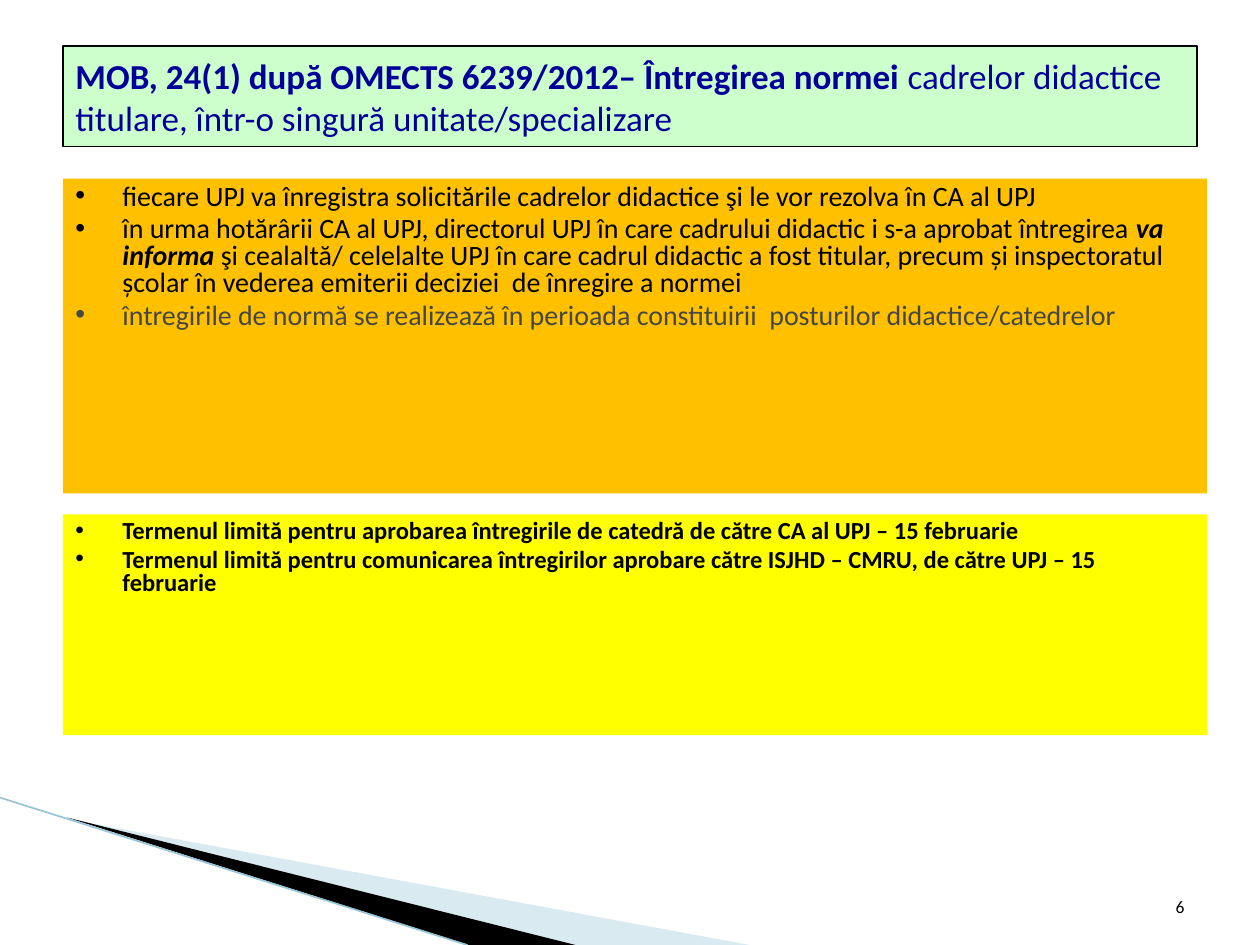
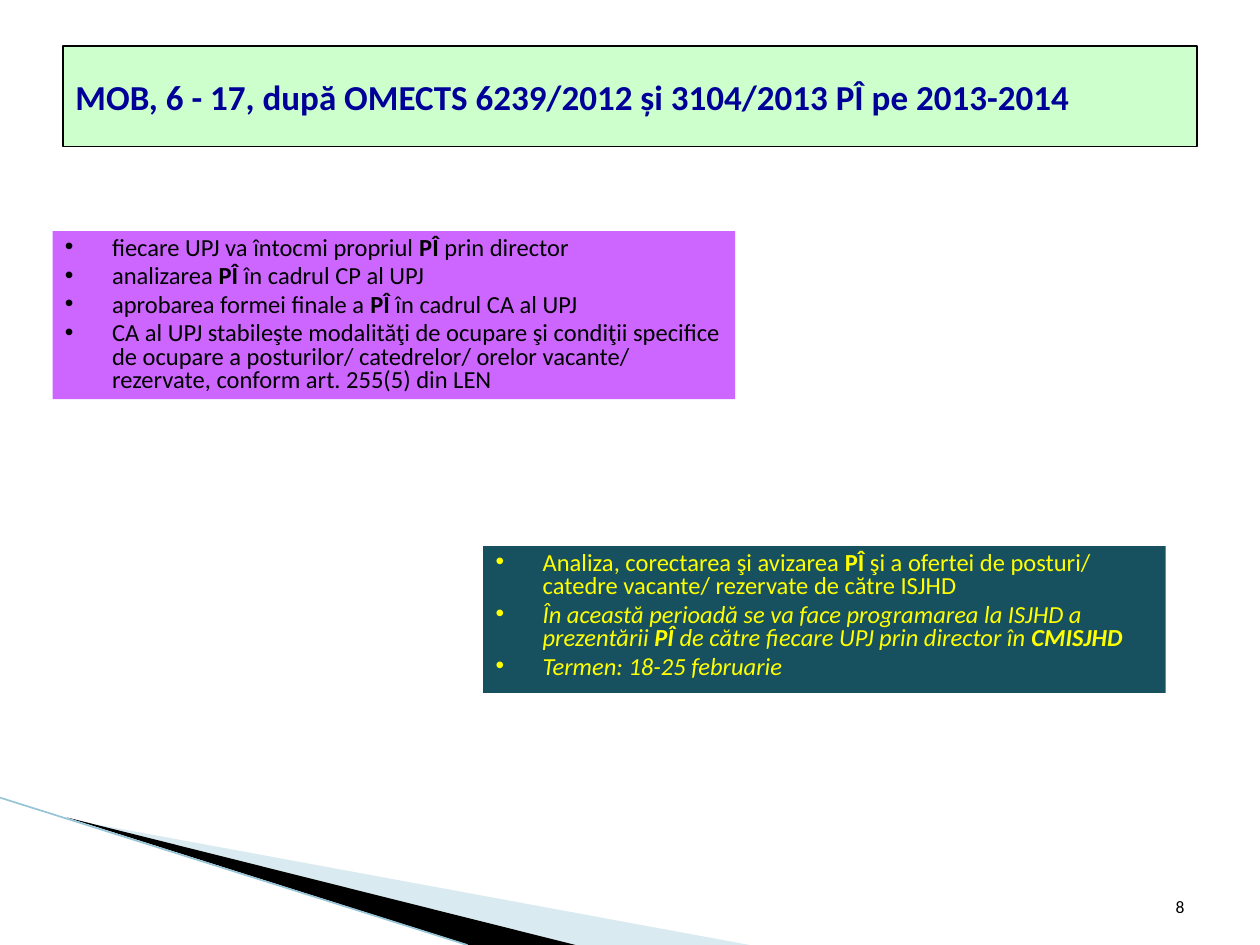
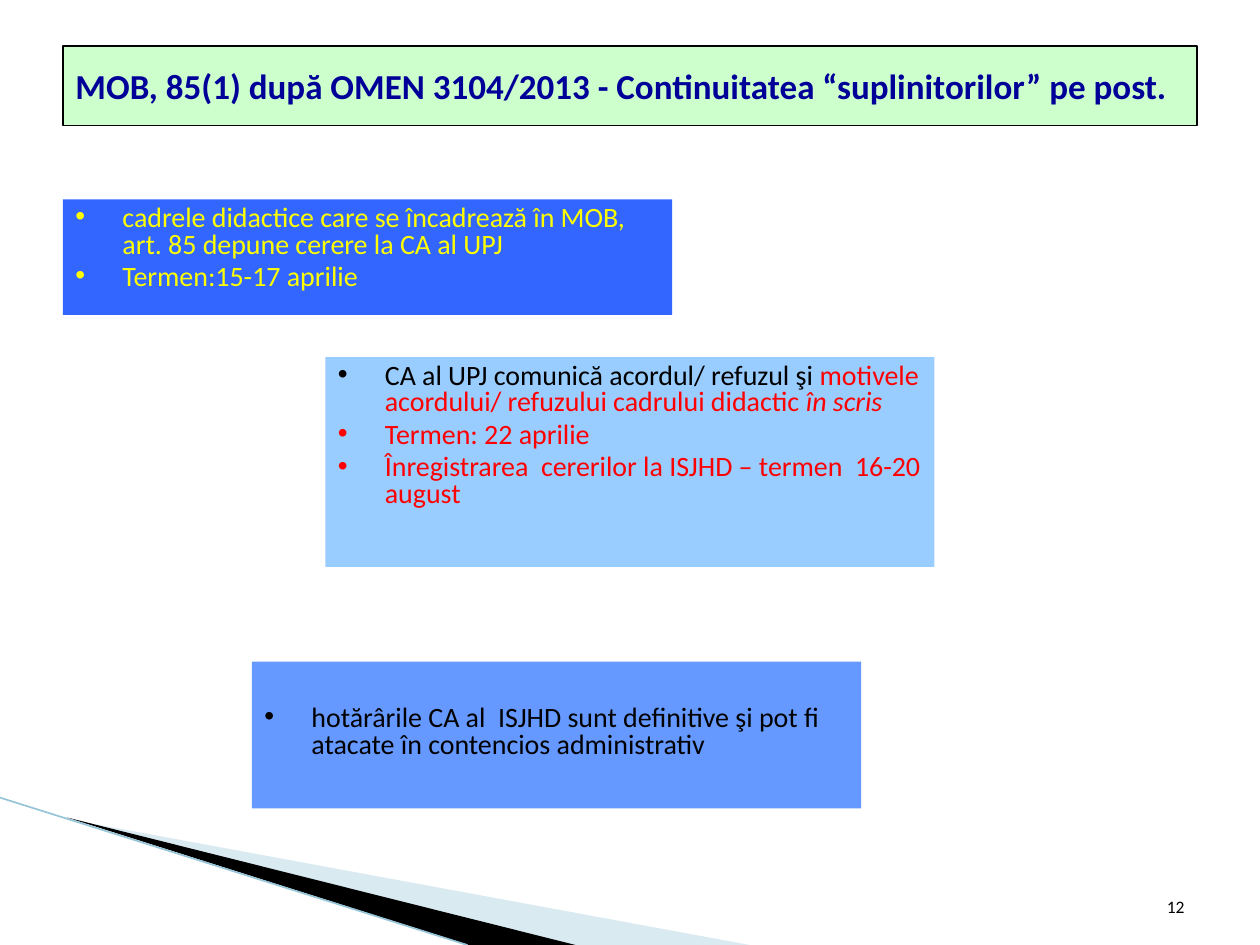
import pptx
import pptx.util
import pptx.dml.color
import pptx.enum.shapes
import pptx.enum.text
import pptx.oxml
import lxml.etree

Cm = pptx.util.Cm
Pt = pptx.util.Pt
Rgb = pptx.dml.color.RGBColor.from_string
Anchor = pptx.enum.text.MSO_ANCHOR
Align = pptx.enum.text.PP_ALIGN
Rect = pptx.enum.shapes.MSO_SHAPE.RECTANGLE

hues = {
    "black": "000000", "navy": "000099", "mint": "CCFFCC", "mist": "A0CBDC",
    "edge": "97C5D8", "amber": "FFC000", "gray": "464646", "yellow": "FFFF00",
    "violet": "CC66FF", "teal": "175160", "blue": "3366FF", "sky": "99CCFF",
    "steel": "6699FF", "red": "FF0000",
}
bold = {"bold": True}
slant = {"italic": True}
both = {"bold": True, "italic": True}
red = {"color": "red"}


def write(frame, paras, size=16, color="black", bold=False, align=None,
          anchor=Anchor.TOP, bullet=False, top=0.13):
    frame.word_wrap = True
    frame.auto_size = pptx.enum.text.MSO_AUTO_SIZE.NONE
    frame.vertical_anchor = anchor
    frame.margin_left = frame.margin_right = Cm(0.25)
    frame.margin_top, frame.margin_bottom = Cm(top), Cm(0.13)
    for rank, runs in enumerate(paras):
        para = frame.add_paragraph() if rank else frame.paragraphs[0]
        para.alignment = align or Align.LEFT
        if bullet:
            para.line_spacing = 0.8
            para.space_before = Pt(size * 0.2 if rank else 0)
            props = para._p.get_or_add_pPr()
            props.set("marL", str(Cm(0.95)))
            props.set("indent", str(-Cm(0.95)))
            for tag, key, value in (("a:buFont", "typeface", "Arial"), ("a:buChar", "char", "•")):
                mark = lxml.etree.SubElement(props, pptx.oxml.ns.qn(tag))
                mark.set(key, value)
        for piece in [runs] if isinstance(runs, str) else runs:
            words, style = (piece, {}) if isinstance(piece, str) else piece
            run = para.add_run()
            run.text = words
            run.font.name = "Calibri"
            run.font.size = Pt(size)
            run.font.bold = style.get("bold", bold)
            run.font.italic = style.get("italic", False)
            run.font.color.rgb = Rgb(hues[style.get("color", color)])


pages = [
    {
        "title": ["MOB, 24(1) după OMECTS 6239/2012– Întregirea normei ",
                  ("cadrelor didactice titulare, într-o singură unitate/specializare", {"bold": False})],
        "tall": 2.03,
        "number": "6",
        "boxes": [
            ((1.27, 3.6, 23.06, 6.35), "amber", {}, [
                "fiecare UPJ va înregistra solicitările cadrelor didactice şi le vor rezolva în CA al UPJ",
                ["în urma hotărârii CA al UPJ, directorul UPJ în care cadrului didactic i s-a aprobat întregirea ",
                 ("va informa ", both),
                 "şi cealaltă/ celelalte UPJ în care cadrul didactic a fost titular, precum și inspectoratul "
                 "școlar în vederea emiterii deciziei  de înregire a normei"],
                [("întregirile de normă se realizează în perioada constituirii  posturilor didactice/catedrelor",
                  {"color": "gray"})],
            ]),
            ((1.27, 10.37, 23.06, 4.45), "yellow", {"size": 14, "bold": True}, [
                "Termenul limită pentru aprobarea întregirile de catedră de către CA al UPJ – 15 februarie",
                "Termenul limită pentru comunicarea întregirilor aprobare către ISJHD – CMRU, "
                "de către UPJ – 15 februarie",
            ]),
        ],
    },
    {
        "title": "MOB, 6 - 17, după OMECTS 6239/2012 și 3104/2013 PÎ pe 2013-2014",
        "tall": 2.03,
        "number": "8",
        "boxes": [
            ((1.06, 4.66, 13.76, 3.39), "violet", {"size": 14}, [
                ["fiecare UPJ va întocmi propriul ", ("PÎ", bold), " prin director"],
                ["analizarea ", ("PÎ", bold), " în cadrul CP al UPJ"],
                ["aprobarea formei finale a ", ("PÎ", bold), " în cadrul CA al UPJ"],
                "CA al UPJ stabileşte modalităţi de ocupare şi condiţii specifice de ocupare a posturilor/ "
                "catedrelor/ orelor vacante/ rezervate, conform art. 255(5) din LEN",
            ]),
            ((9.74, 11.01, 13.76, 2.96), "teal", {"size": 14, "color": "yellow"}, [
                ["Analiza, corectarea şi avizarea ", ("PÎ", bold),
                 " şi a ofertei de posturi/ catedre vacante/ rezervate de către ISJHD"],
                [("În această perioadă se va face programarea la ISJHD a prezentării ", slant),
                 ("PÎ", both), (" de către fiecare UPJ prin director în ", slant), ("CMISJHD", both)],
                [("Termen: 18-25 februarie", slant)],
            ]),
        ],
    },
    {
        "title": "MOB, 85(1) după OMEN 3104/2013 - Continuitatea “suplinitorilor” pe post.",
        "tall": 1.6,
        "number": "12",
        "boxes": [
            ((1.27, 4.02, 12.28, 2.33), "blue", {"color": "yellow"}, [
                "cadrele didactice care se încadrează în MOB, art. 85 depune cerere la CA al UPJ",
                "Termen:15-17 aprilie",
            ]),
            ((5.08, 13.34, 12.28, 2.96), "steel", {"top": 0.9}, [
                "hotărârile CA al  ISJHD sunt definitive şi pot fi atacate în contencios administrativ",
            ]),
            ((6.56, 7.2, 12.28, 4.23), "sky", {}, [
                ["CA al UPJ comunică acordul/ refuzul şi ",
                 ("motivele acordului/ refuzului cadrului didactic ", red),
                 ("în scris", {"italic": True, "color": "red"})],
                [("Termen: 22 aprilie", red)],
                [("Înregistrarea  cererilor la ISJHD – termen  16-20 august", red)],
            ]),
        ],
    },
]
wedges = [
    ("mist", [(1.4, 16.52), (15.11, 19.05), (11.58, 19.05)]),
    ("black", [(1.35, 16.48), (11.6, 19.05), (9.45, 19.05)]),
]

deck = pptx.Presentation()
deck.slide_width, deck.slide_height = Cm(25.4), Cm(19.05)
layout = deck.slide_layouts[5]
slides = [deck.slides.add_slide(layout) for page in pages]

decor = []
for hue, points in wedges:
    dots = [(Cm(x), Cm(y)) for x, y in points]
    pen = slides[0].shapes.build_freeform(*dots[0])
    pen.add_line_segments(dots[1:], close=True)
    wedge = pen.convert_to_shape()
    wedge.shadow.inherit = False
    wedge.fill.solid()
    wedge.fill.fore_color.rgb = Rgb(hues[hue])
    wedge.line.fill.background()
    decor.append(wedge)
tint = decor[0].element.xpath(".//a:solidFill/a:srgbClr")[0]
lxml.etree.SubElement(tint, pptx.oxml.ns.qn("a:alpha")).set("val", "40000")
rule = slides[0].shapes.add_connector(
    pptx.enum.shapes.MSO_CONNECTOR.STRAIGHT, Cm(0), Cm(16.08), Cm(9.42), Cm(19.05))
rule.line.color.rgb = Rgb(hues["edge"])
rule.line.width = Pt(0.95)
lxml.etree.SubElement(rule.element.spPr, pptx.oxml.ns.qn("a:effectLst"))
decor.append(rule)
for rank, item in enumerate(decor):
    item.element.xpath(".//p:cNvPr")[0].set("id", str(20 + rank))
    layout.shapes.element.append(item.element)

for slide, page in zip(slides, pages):
    title = slide.shapes.title
    title.left, title.top, title.width, title.height = Cm(1.27), Cm(0.93), Cm(22.86), Cm(page["tall"])
    title.fill.solid()
    title.fill.fore_color.rgb = Rgb(hues["mint"])
    title.line.color.rgb = Rgb(hues["black"])
    title.line.width = Pt(0.75)
    write(title.text_frame, [page["title"]], size=20, color="navy", bold=True, anchor=Anchor.MIDDLE)
    for place, hue, style, paras in page["boxes"]:
        box = slide.shapes.add_shape(Rect, *map(Cm, place))
        box.shadow.inherit = False
        box.fill.solid()
        box.fill.fore_color.rgb = Rgb(hues[hue])
        box.line.fill.background()
        write(box.text_frame, paras, bullet=True, **style)
    foot = slide.shapes.add_textbox(Cm(18.2), Cm(17.3), Cm(5.93), Cm(1.32))
    write(foot.text_frame, [page["number"]], size=10, align=Align.RIGHT, anchor=Anchor.BOTTOM)

deck.save("out.pptx")
